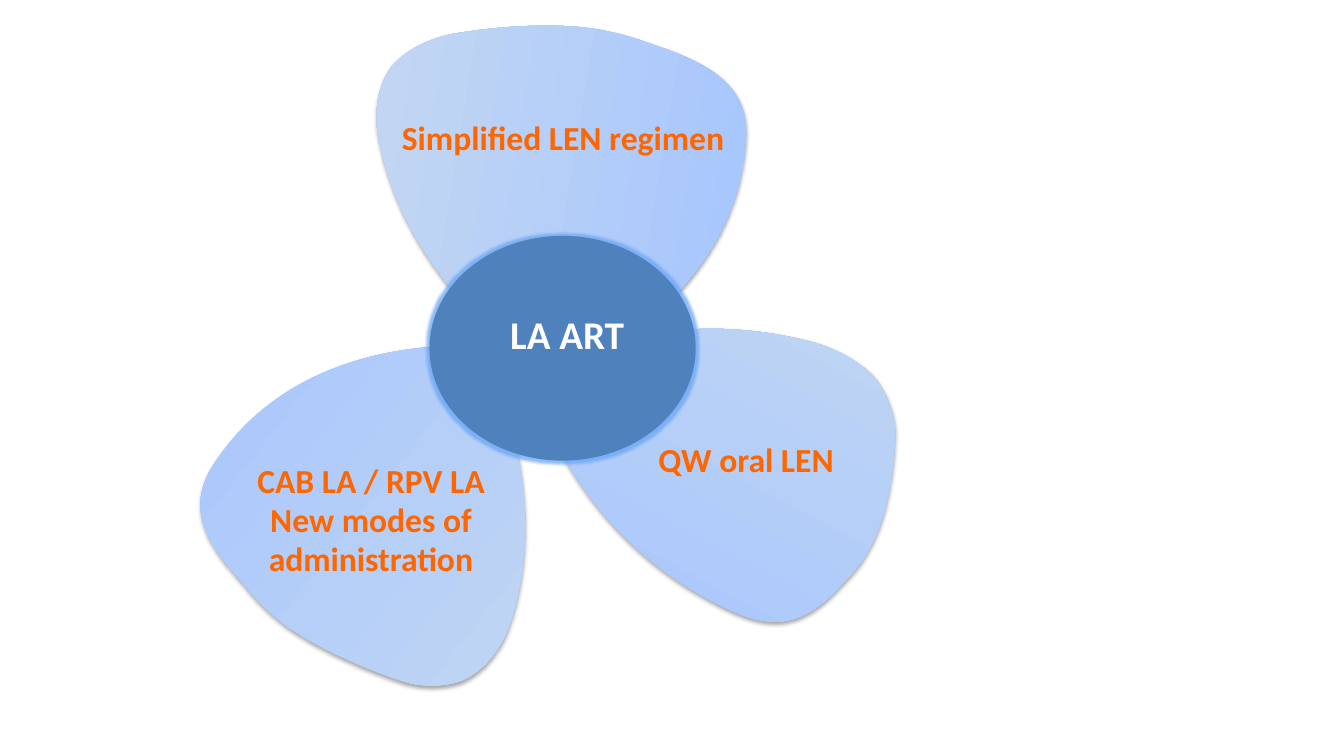
import math
from lxml import etree
from pptx import Presentation
from pptx.dml.color import RGBColor
from pptx.enum import shapes, text
from pptx.oxml.ns import qn
from pptx.util import Inches, Pt

COLORS = {"petal_deep": "A4C4FF", "petal_pale": "C6D9F1", "hub": "4F81BD",
          "glow": "6AA5F5", "shadow": "000000", "hub_text": "FFFFFF",
          "label": "FF6600"}
FONT = "Calibri"

PETALS = [
    {"box": (2.27, 3.21, 3.36, 3.46), "turn": 128, "outline": [
        (2.8, 6.18), (2.55, 5.98), (2.49, 5.88), (2.35, 5.72),
        (1.96, 5.29), (1.89, 4.97), (2.11, 4.62),
        (2.55, 3.94), (3.26, 3.55), (4.18, 3.45),
        (4.71, 3.39), (4.87, 3.57), (5.02, 4.05),
        (5.26, 4.82), (5.27, 5.54), (5.06, 6.18),
        (4.99, 6.39), (4.85, 6.6), (4.66, 6.71),
        (4.51, 6.81), (4.22, 6.83), (4, 6.76),
        (3.6, 6.63), (3.11, 6.41), (2.8, 6.18)]},
    {"box": (3.72, 0.1, 3.51, 3.78), "turn": 279.3, "outline": [
        (5.92, 0.29), (6.26, 0.35), (6.37, 0.41), (6.59, 0.48),
        (7.19, 0.69), (7.43, 0.95), (7.4, 1.38),
        (7.35, 2.22), (6.87, 2.92), (6.05, 3.47),
        (5.57, 3.78), (5.32, 3.71), (4.92, 3.34),
        (4.28, 2.74), (3.9, 2.09), (3.76, 1.4),
        (3.71, 1.17), (3.73, 0.91), (3.85, 0.71),
        (3.95, 0.54), (4.22, 0.39), (4.47, 0.34),
        (4.91, 0.26), (5.5, 0.22), (5.92, 0.29)]},
    {"box": (5.15, 2.97, 3.78, 2.85), "turn": 27.9, "outline": [
        (8.65, 5.39), (8.53, 5.63), (8.45, 5.69), (8.33, 5.82),
        (8, 6.18), (7.71, 6.26), (7.28, 6.07),
        (6.45, 5.7), (5.84, 5.08), (5.45, 4.26),
        (5.23, 3.78), (5.36, 3.62), (5.8, 3.47),
        (6.52, 3.23), (7.25, 3.2), (7.96, 3.37),
        (8.2, 3.42), (8.46, 3.54), (8.63, 3.7),
        (8.78, 3.84), (8.88, 4.1), (8.88, 4.3),
        (8.87, 4.66), (8.8, 5.11), (8.65, 5.39)]},
]
HUB_BOX = (4.26, 2.34, 2.64, 2.23)
HUB_LABEL = (["LA ART"], (4.95, 3.11, 1.35, 0.5))
PETAL_LABELS = [
    (["Simplified LEN regimen"], (3.87, 1.12, 3.43, 0.49)),
    (["QW oral LEN"], (6.42, 4.32, 1.96, 0.49)),
    (["CAB LA / RPV LA", "New modes of", "administration"],
     (2.44, 4.52, 2.48, 1.28)),
]


def rgb(name):
    return RGBColor.from_string(COLORS[name])


def add_effect(shape, kind, color, opacity, **settings):
    shape.shadow.inherit = False
    effects = shape._element.spPr.find(qn("a:effectLst"))
    effect = etree.SubElement(effects, qn(f"a:{kind}"),
                              {key: str(value) for key, value in settings.items()})
    tint = etree.SubElement(effect, qn("a:srgbClr"), val=COLORS[color])
    etree.SubElement(tint, qn("a:alpha"), val=str(opacity * 1000))


def unturned(outline, box, turn):
    left, top, width, height = box
    cx, cy = left + width / 2, top + height / 2
    cos, sin = math.cos(math.radians(turn)), math.sin(math.radians(turn))
    return [(Inches(width / 2 + (x - cx) * cos + (y - cy) * sin),
             Inches(height / 2 - (x - cx) * sin + (y - cy) * cos))
            for x, y in outline]


def curve_outline(petal, points):
    path = petal._element.spPr.find(".//" + qn("a:path"))
    path.clear()
    path.set("w", str(petal.width))
    path.set("h", str(petal.height))
    steps = [("moveTo", points[:1])]
    steps += [("cubicBezTo", points[i:i + 3]) for i in range(1, len(points), 3)]
    for tag, step_points in steps:
        step = etree.SubElement(path, qn(f"a:{tag}"))
        for x, y in step_points:
            etree.SubElement(step, qn("a:pt"), x=str(x), y=str(y))
    etree.SubElement(path, qn("a:close"))


def add_petal(parent, box, turn, outline):
    points = unturned(outline, box, turn)
    builder = parent.build_freeform(*points[0])
    builder.add_line_segments(points[3::3])
    petal = builder.convert_to_shape()
    petal.left, petal.top, petal.width, petal.height = map(Inches, box)
    curve_outline(petal, points)
    petal.rotation = turn
    petal.line.fill.background()
    petal.fill.gradient()
    petal.fill.gradient_angle = 90
    for stop, position, color in zip(petal.fill.gradient_stops, (0, 1),
                                     ("petal_deep", "petal_pale")):
        stop.position = position
        stop.color.rgb = rgb(color)
    add_effect(petal, "outerShdw", "shadow", 35, blurRad=Pt(3.1), dist=Pt(1.8),
               dir=90 * 60000, rotWithShape=0)


def add_label(parent, lines, box, size, color):
    frame = parent.add_textbox(*map(Inches, box)).text_frame
    frame.word_wrap = False
    frame.auto_size = text.MSO_AUTO_SIZE.SHAPE_TO_FIT_TEXT
    frame.text = "\n".join(lines)
    for paragraph in frame.paragraphs:
        paragraph.alignment = text.PP_ALIGN.CENTER
        paragraph.line_spacing = Pt(28)
        paragraph.font.name = FONT
        paragraph.font.size = Pt(size)
        paragraph.font.bold = True
        paragraph.font.color.rgb = rgb(color)


def main():
    deck = Presentation()
    deck.slide_width, deck.slide_height = Inches(13.33), Inches(7.5)
    slide = deck.slides.add_slide(deck.slide_layouts[6])

    propeller = slide.shapes.add_group_shape().shapes
    for petal in PETALS:
        add_petal(propeller, **petal)
    hub = propeller.add_shape(shapes.MSO_SHAPE.OVAL, *map(Inches, HUB_BOX))
    hub.fill.solid()
    hub.fill.fore_color.rgb = rgb("hub")
    hub.line.fill.background()
    add_effect(hub, "glow", "glow", 75, rad=Pt(4))
    add_label(propeller, *HUB_LABEL, 28, "hub_text")

    for lines, box in PETAL_LABELS:
        add_label(slide.shapes, lines, box, 24, "label")
    deck.save("out.pptx")


if __name__ == "__main__":
    main()
